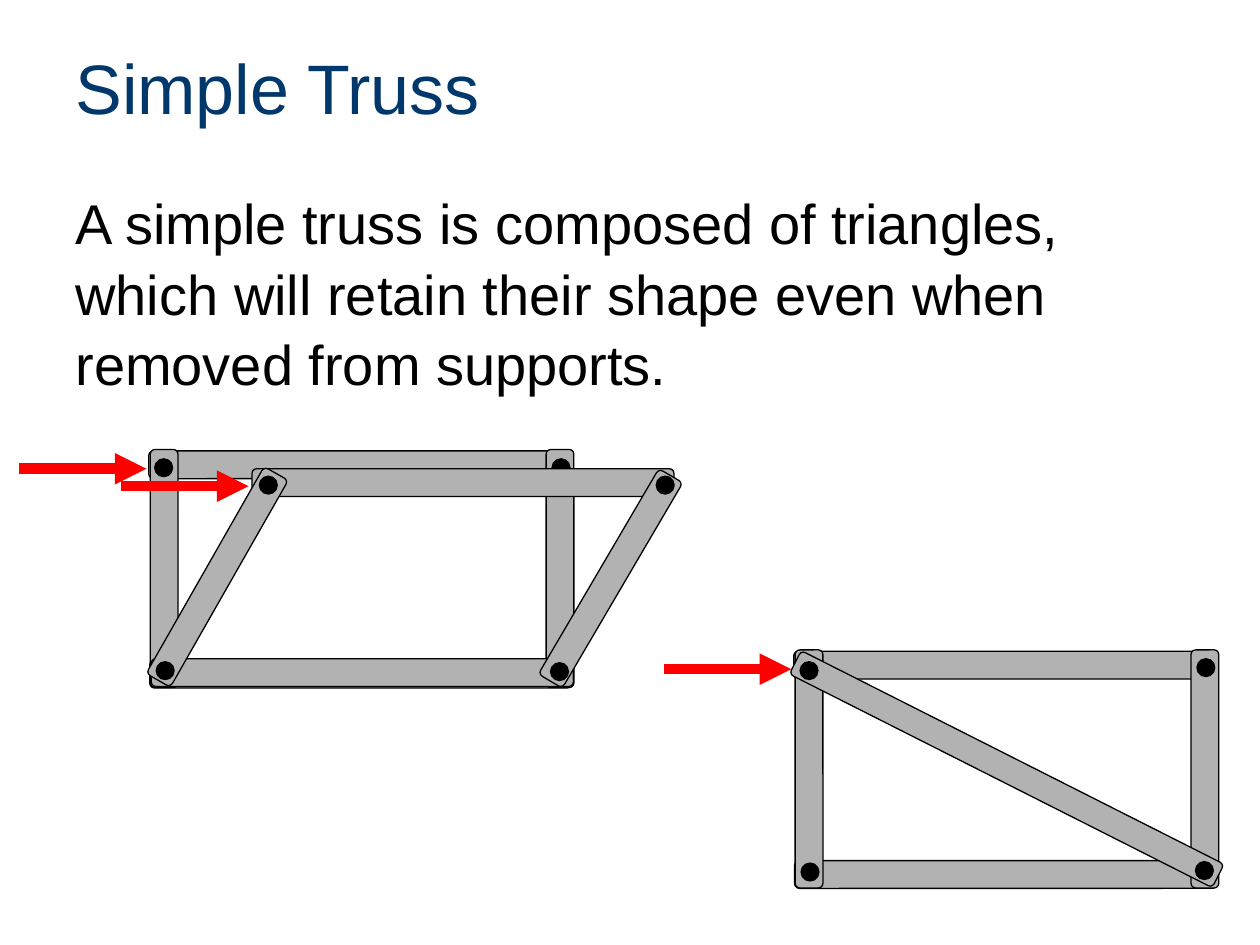
"""Builds a slide that compares a frame that sways with a braced truss."""
from lxml.etree import SubElement
from pptx import Presentation
from pptx.dml.color import RGBColor
from pptx.enum.shapes import MSO_CONNECTOR, MSO_SHAPE
from pptx.enum.text import MSO_ANCHOR, PP_ALIGN
from pptx.oxml.ns import qn
from pptx.util import Cm, Pt

BLACK = RGBColor(0x00, 0x00, 0x00)
GREY = RGBColor(0xB2, 0xB2, 0xB2)
RED = RGBColor(0xFF, 0x00, 0x00)
NAVY = RGBColor(0x00, 0x38, 0x6B)
LONG, SHORT, THICK, DOT, PUSH = 8.51, 4.8, 0.56, 0.36, 2.57


def apply(item, style):
    for name, value in style.items():
        setattr(item, name, value)


class Pen:
    font = "Arial"
    frame = {"word_wrap": True}

    def __init__(self, slide):
        self.slide = slide
        self.shapes = slide.shapes

    def letter(self, box, text, size, color, anchor, style):
        body = box.text_frame
        apply(body, {**self.frame, "vertical_anchor": anchor})
        body.text = text
        para = body.paragraphs[0]
        apply(para, {"alignment": PP_ALIGN.LEFT, **style})
        apply(para.runs[0].font, {"name": self.font, "size": Pt(size)})
        para.runs[0].font.color.rgb = color

    def title(self, text, x, y, wide, high):
        box = self.slide.shapes.title
        apply(box, {"left": Cm(x), "top": Cm(y), "width": Cm(wide), "height": Cm(high)})
        self.letter(box, text, 40, NAVY, MSO_ANCHOR.MIDDLE, {})

    def text(self, text, x, y, wide, high):
        box = self.shapes.add_textbox(Cm(x), Cm(y), Cm(wide), Cm(high))
        self.letter(box, text, 32, BLACK, MSO_ANCHOR.TOP, {"line_spacing": 1.05})

    def shape(self, kind, x, y, wide, high, fill):
        part = self.shapes.add_shape(kind, Cm(x), Cm(y), Cm(wide), Cm(high))
        part.shadow.inherit = False
        part.fill.solid()
        part.fill.fore_color.rgb = fill
        part.line.color.rgb = BLACK
        part.line.width = Pt(0.75)
        return part

    def bar(self, x, y, wide=LONG, turn=0, high=THICK):
        part = self.shape(MSO_SHAPE.ROUNDED_RECTANGLE, x, y, wide, high, GREY)
        part.rotation = turn

    def dot(self, x, y):
        self.shape(MSO_SHAPE.OVAL, x, y, DOT, DOT, BLACK)

    def arrow(self, x, y):
        line = self.shapes.add_connector(
            MSO_CONNECTOR.STRAIGHT, Cm(x), Cm(y), Cm(x + PUSH), Cm(y))
        line.line.color.rgb = RED
        line.line.width = Pt(6)
        props = line.element.spPr
        SubElement(props.find(qn("a:ln")), qn("a:tailEnd"), type="triangle")
        SubElement(props, qn("a:effectLst"))

    def box(self, x, y):
        self.bar(x, y)
        self.bar(x + 0.02, y + 4.22)
        for left in (-2.09, 5.89):
            self.bar(x + left, y + 2.09, SHORT, 270)
        self.arrow(x - 2.62, y + 0.36)

    def sway(self):
        self.shapes = self.slide.shapes.add_group_shape().shapes
        self.bar(5.08, 9.45)
        self.bar(3.05, 13.28)
        self.bar(1.98, 11.35, SHORT, 299.7)
        self.bar(9.91, 11.38, SHORT, 300.4)
        for spot in ((5.23, 9.6), (13.23, 9.6), (3.15, 13.34), (11.1, 13.36)):
            self.dot(*spot)
        self.arrow(2.44, 9.8)
        self.shapes = self.slide.shapes


def main():
    deck = Presentation()
    apply(deck, {"slide_width": Cm(25.4), "slide_height": Cm(19.05)})
    pen = Pen(deck.slides.add_slide(deck.slide_layouts[5]))
    pen.title("Simple Truss", 1.27, 0.76, 22.86, 1.98)

    pen.box(3, 9.09)
    for left in (3.12, 11.13):
        pen.dot(left, 9.25)
    pen.sway()

    pen.box(16, 13.13)
    pen.bar(15.52, 15.24, 9.55, 26.8, 0.53)
    for spot in ((24.13, 13.28), (16.15, 17.4), (16.13, 13.34), (24.1, 17.37)):
        pen.dot(*spot)

    pen.text("A simple truss is composed of triangles, which will retain "
             "their shape even when removed from supports.", 1.27, 3.61, 22.86, 13.41)
    deck.save("out.pptx")


if __name__ == "__main__":
    main()
